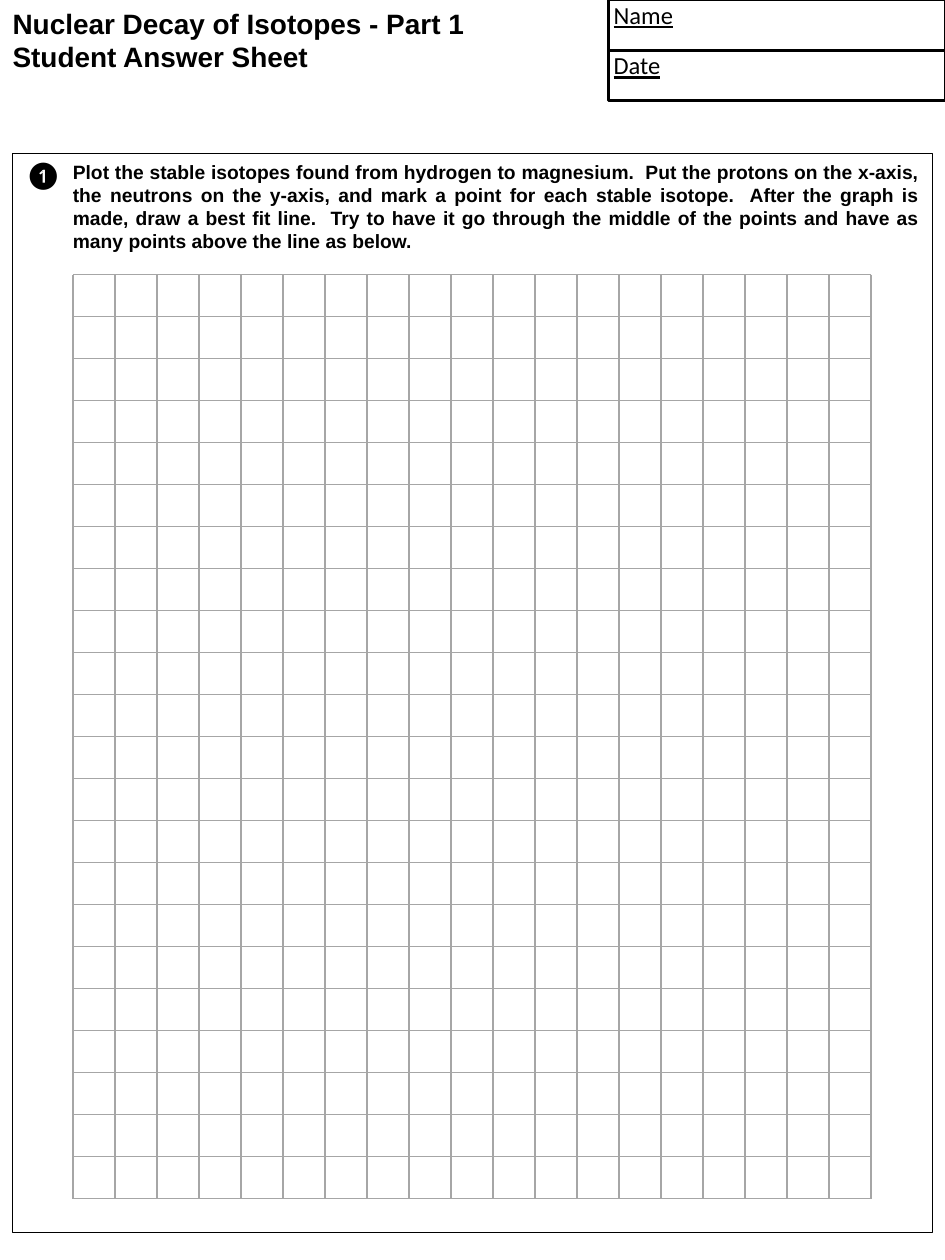
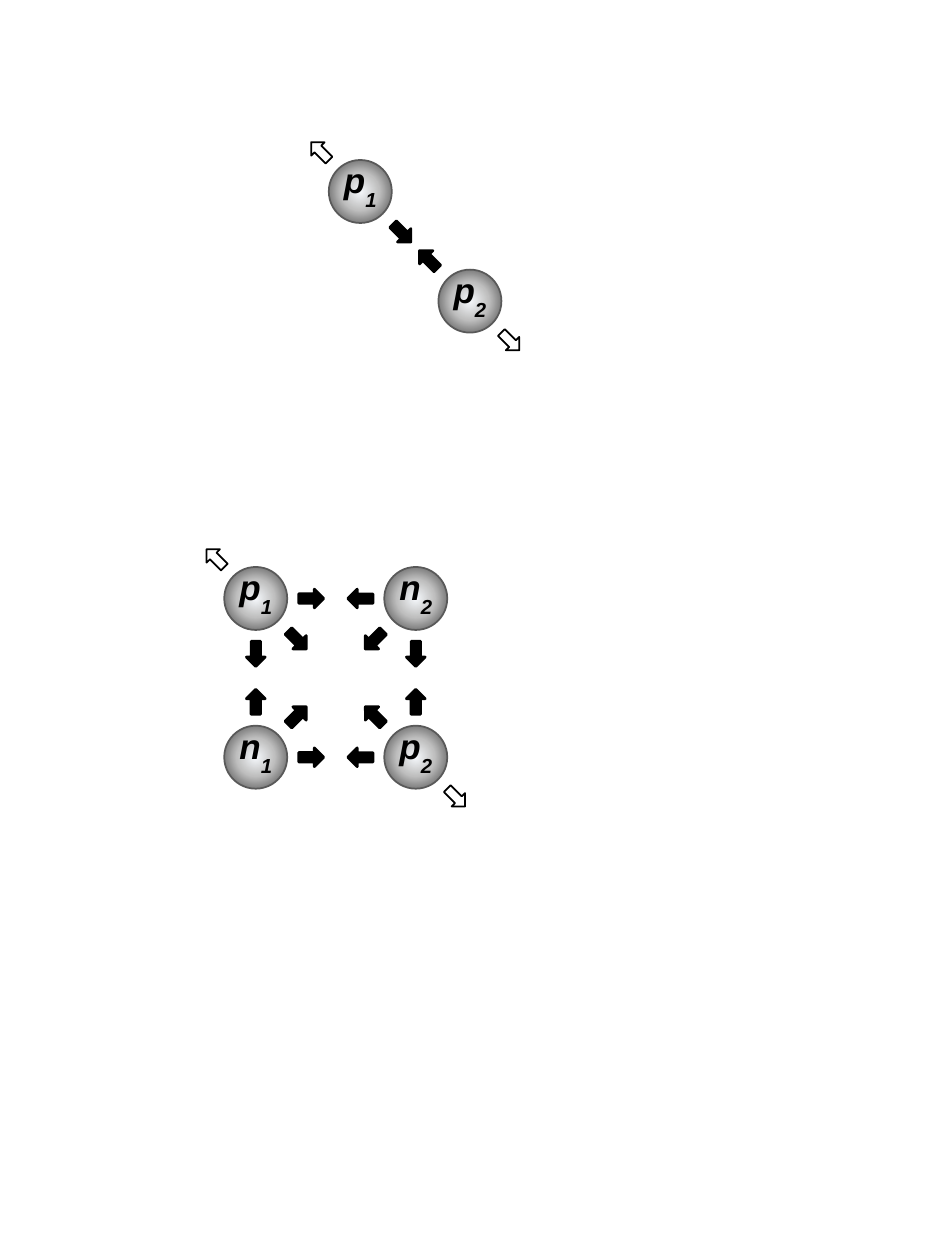
import math

from lxml import etree
from pptx import Presentation
from pptx.dml.color import RGBColor
from pptx.enum import shapes, text
from pptx.oxml.ns import qn
from pptx.util import Inches, Pt

COLORS = {"ink": "000000", "paper": "FFFFFF", "grid": "A6A6A6", "rim": "595959"}
SPHERE_STOPS = [(0, "F6F9FC"), (43, "BFBFBF"), (70, "808080"), (100, "808080")]
TITLE_ONLY, BLANK = 5, 6

QUESTION = (
    "Plot the stable isotopes found from hydrogen to magnesium.  Put the protons "
    "on the x-axis, the neutrons on the y-axis, and mark a point for each stable "
    "isotope.  After the graph is made, draw a best fit line.  Try to have it go "
    "through the middle of the points and have as many points above the line as below."
)


def color(name):
    return RGBColor.from_string(COLORS[name])


def style_font(font, name, size, **flags):
    font.name, font.size = name, Pt(size)
    font.color.rgb = color("ink")
    for flag, value in flags.items():
        setattr(font, flag, value)


def add_outlined(parent, kind, left, top, width, height, line, weight, fill=None):
    shape = parent.shapes.add_shape(
        kind, Inches(left), Inches(top), Inches(width), Inches(height))
    shape.shadow.inherit = False
    shape.line.color.rgb = color(line)
    shape.line.width = Pt(weight)
    if fill:
        shape.fill.solid()
        shape.fill.fore_color.rgb = color(fill)
    else:
        shape.fill.background()
    return shape


def set_margins(frame, left=0, top=0, right=0, bottom=0):
    frame.margin_left, frame.margin_top = Inches(left), Inches(top)
    frame.margin_right, frame.margin_bottom = Inches(right), Inches(bottom)


# Answer sheet parts

def add_title(page, lines):
    title = page.shapes.title
    title.left, title.top = Inches(0), Inches(0)
    title.width, title.height = Inches(4.27), Inches(0.69)
    frame = title.text_frame
    frame.text = "\n".join(lines)
    frame.vertical_anchor = text.MSO_ANCHOR.TOP
    frame.auto_size = text.MSO_AUTO_SIZE.NONE
    for para in frame.paragraphs:
        para.alignment = text.PP_ALIGN.LEFT
        style_font(para.font, "Arial", 16, bold=True)


def add_student_fields(page, labels):
    group = page.shapes.add_group_shape()
    height = 0.4
    for row, label in enumerate(labels):
        box = add_outlined(group, shapes.MSO_SHAPE.RECTANGLE,
                           4.83, row * height, 2.67, height, "ink", 1.5)
        frame = box.text_frame
        set_margins(frame, left=0.04)
        frame.vertical_anchor = text.MSO_ANCHOR.TOP
        para = frame.paragraphs[0]
        para.text = label
        para.alignment = text.PP_ALIGN.LEFT
        style_font(para.font, "Calibri", 14, underline=True)


def add_question(page, number, question):
    panel = add_outlined(page, shapes.MSO_SHAPE.RECTANGLE,
                         0.1, 1.22, 7.3, 8.56, "ink", 0.75)
    frame = panel.text_frame
    frame.vertical_anchor = text.MSO_ANCHOR.TOP
    para = frame.paragraphs[0]
    para.text = question
    para.alignment = text.PP_ALIGN.JUSTIFY
    para.space_after = Pt(6)
    para._p.get_or_add_pPr().set("marL", str(Inches(0.38)))
    style_font(para.font, "Arial", 11, bold=True)

    badge = page.shapes.add_textbox(Inches(0.1), Inches(1.2), Inches(0.5), Inches(0.37))
    badge.text_frame.word_wrap = False
    badge.text_frame.auto_size = text.MSO_AUTO_SIZE.SHAPE_TO_FIT_TEXT
    para = badge.text_frame.paragraphs[0]
    para.text = number
    style_font(para.font, "Calibri", 16)


def add_grid_line(group, x1, y1, x2, y2):
    line = group.shapes.add_connector(
        shapes.MSO_CONNECTOR.STRAIGHT, Inches(x1), Inches(y1), Inches(x2), Inches(y2))
    line.line.color.rgb = color("grid")
    line.line.width = Pt(0.75)
    etree.SubElement(line._element.spPr, qn("a:effectLst"))


def add_graph_grid(page, left, top, columns, rows, cell):
    group = page.shapes.add_group_shape()
    right, bottom = left + columns * cell, top + rows * cell
    for column in range(columns + 1):
        x = left + column * cell
        add_grid_line(group, x, top, x, bottom)
    for row in range(rows + 1):
        y = top + row * cell
        add_grid_line(group, left, y, right, y)


# Nucleus parts

def fill_radial(shape, stops):
    shape.fill.gradient()
    gradient = shape._element.spPr.find(qn("a:gradFill"))
    for child in list(gradient):
        gradient.remove(child)
    stop_list = etree.SubElement(gradient, qn("a:gsLst"))
    for position, value in stops:
        stop = etree.SubElement(stop_list, qn("a:gs"), pos=str(position * 1000))
        etree.SubElement(stop, qn("a:srgbClr"), val=value)
    circle = etree.SubElement(gradient, qn("a:path"), path="circle")
    center = dict.fromkeys("ltrb", "50000")
    etree.SubElement(circle, qn("a:fillToRect"), **center)


def add_nucleon(group, label, x, y):
    size = 0.5
    sphere = add_outlined(group, shapes.MSO_SHAPE.OVAL, x - size / 2, y - size / 2,
                          size, size, "rim", 1)
    fill_radial(sphere, SPHERE_STOPS)
    frame = sphere.text_frame
    set_margins(frame, bottom=0.1)
    frame.vertical_anchor = text.MSO_ANCHOR.MIDDLE
    para = frame.paragraphs[0]
    para.alignment = text.PP_ALIGN.CENTER
    style_font(para.font, "Arial", 20, bold=True, italic=True)
    symbol, index = label
    para.add_run().text = symbol
    span = para.add_run()
    span.text = index
    span.font._element.set("baseline", "-40000")


def add_force(group, x, y, dx, dy, fill="ink", weight=1.5):
    """Arrow centred at an offset from a nucleon, pointing away from it."""
    width, height = 0.2, 0.15
    arrow = add_outlined(group, shapes.MSO_SHAPE.RIGHT_ARROW,
                         x + dx - width / 2, y + dy - height / 2,
                         width, height, "ink", weight, fill)
    arrow.rotation = math.degrees(math.atan2(dy, dx)) % 360


def add_nucleus(page, nucleons, center, neighbours):
    """Draw nucleons with strong-force arrows inward and repulsion outward."""
    group = page.shapes.add_group_shape()
    for label, x, y in nucleons:
        add_nucleon(group, label, x, y)
        inward_x = math.copysign(1, center[0] - x)
        inward_y = math.copysign(1, center[1] - y)
        add_force(group, x, y, 0.33 * inward_x, 0.33 * inward_y)
        if neighbours:
            add_force(group, x, y, 0.44 * inward_x, 0)
            add_force(group, x, y, 0, 0.44 * inward_y)
        if label.startswith("p"):
            add_force(group, x, y, -0.32 * inward_x, -0.32 * inward_y, "paper", 1)


# Pages

def build_answer_sheet(deck):
    page = deck.slides.add_slide(deck.slide_layouts[TITLE_ONLY])
    add_title(page, ["Nuclear Decay of Isotopes - Part 1", "Student Answer Sheet"])
    add_question(page, "❶", QUESTION)
    add_student_fields(page, ["Name", "Date"])
    add_graph_grid(page, 0.58, 2.18, columns=19, rows=22, cell=1 / 3)


def build_nuclei(deck):
    page = deck.slides.add_slide(deck.slide_layouts[BLANK])
    left, right, top, bottom = 2.03, 3.3, 4.75, 6.01
    square = [("p1", left, top), ("n1", left, bottom),
              ("p2", right, bottom), ("n2", right, top)]
    add_nucleus(page, square, (2.67, 5.38), neighbours=True)
    pair = [("p1", 2.86, 1.52), ("p2", 3.73, 2.39)]
    add_nucleus(page, pair, (3.3, 1.96), neighbours=False)


def main():
    deck = Presentation()
    deck.slide_width, deck.slide_height = Inches(7.5), Inches(10)
    build_answer_sheet(deck)
    build_nuclei(deck)
    deck.save("out.pptx")


if __name__ == "__main__":
    main()
